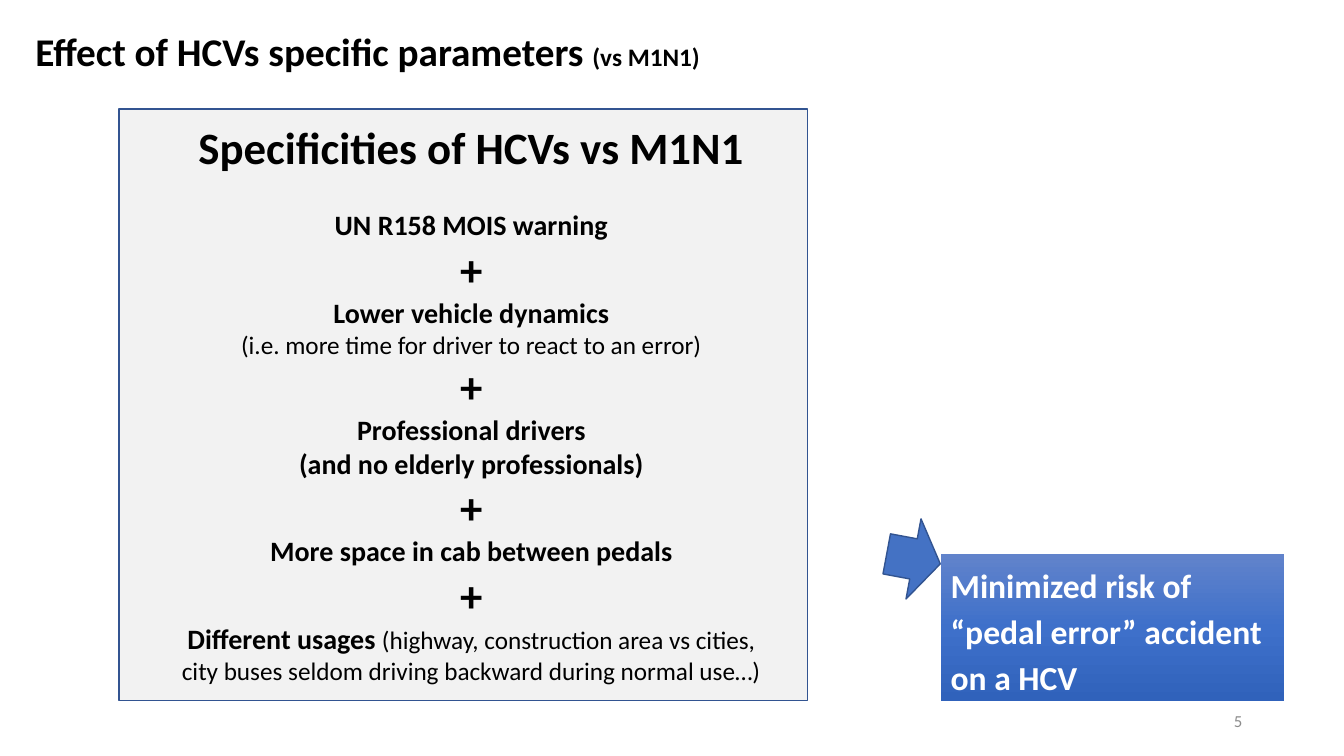
import copy

import pptx
import pptx.dml.color
import pptx.enum.shapes
import pptx.enum.text
import pptx.oxml.ns
import pptx.util

Inches = pptx.util.Inches
ALIGN = pptx.enum.text.PP_ALIGN
ANCHOR = pptx.enum.text.MSO_ANCHOR
SHAPES = pptx.enum.shapes.MSO_SHAPE
qn = pptx.oxml.ns.qn

HEADING = {"size": 32, "bold": True}
STRONG = {"size": 20, "bold": True}
DETAIL = {"size": 18, "bold": False}
PLUS = [("+", HEADING)]

SPECIFICITIES = [
    [[("UN R158 MOIS warning", STRONG)]],
    [[("Lower vehicle dynamics", STRONG)],
     [("(i.e. more time for driver to react to an error)", DETAIL)]],
    [[("Professional drivers", STRONG)],
     [("(and no elderly professionals)", STRONG)]],
    [[("More space in cab between pedals", STRONG)]],
    [[("Different usages ", STRONG),
      ("(highway, construction area vs cities, city buses seldom "
       "driving backward during normal use…)", DETAIL)]],
]


def color(value):
    return pptx.dml.color.RGBColor.from_string(value)


def apply(target, values):
    for name, value in values.items():
        setattr(target, name, value)


def place(shape, box):
    apply(shape, dict(zip(("left", "top", "width", "height"), map(Inches, box))))


def prepare_frame(frame, anchor=ANCHOR.TOP):
    apply(frame, {
        "word_wrap": True,
        "auto_size": pptx.enum.text.MSO_AUTO_SIZE.NONE,
        "vertical_anchor": anchor,
    })


def write(paragraph, runs, align=ALIGN.LEFT, text_color="000000"):
    paragraph.alignment = align
    paragraph.space_before = pptx.util.Pt(0)
    for text, style in runs:
        run = paragraph.add_run()
        run.text = text
        apply(run.font, {
            "name": "Calibri",
            "size": pptx.util.Pt(style["size"]),
            "bold": style["bold"],
        })
        run.font.color.rgb = color(text_color)


def add_block(slide, preset, box, fill=None, line=None):
    shape = slide.shapes.add_shape(preset, *map(Inches, box))
    shape.shadow.inherit = False
    if fill:
        shape.fill.solid()
        shape.fill.fore_color.rgb = color(fill)
    if line:
        shape.line.color.rgb = color(line)
        shape.line.width = pptx.util.Pt(1)
    else:
        shape.line.fill.background()
    return shape


def add_title(slide, box):
    title = slide.shapes.title
    place(title, box)
    prepare_frame(title.text_frame)
    write(title.text_frame.paragraphs[0], [
        ("Effect of HCVs specific parameters ", {"size": 28, "bold": True}),
        ("(vs M1N1)", {"size": 18, "bold": True}),
    ])


def add_specificities(slide, box):
    left, top, width, height = box
    panel = add_block(slide, SHAPES.RECTANGLE, box, "F2F2F2", "325491")
    body = slide.placeholders[1]
    panel._element.addnext(body._element)
    place(body, (left + 0.39, top + 0.06, width - 0.62, height - 0.11))
    frame = body.text_frame
    prepare_frame(frame)
    lines = [[("Specificities of HCVs vs M1N1", HEADING)]]
    for index, group in enumerate(SPECIFICITIES):
        lines += ([PLUS] if index else []) + group
    for index, runs in enumerate(lines):
        paragraph = frame.add_paragraph() if index else frame.paragraphs[0]
        properties = paragraph._p.get_or_add_pPr()
        properties.set("marL", "0")
        properties.set("indent", "0")
        properties.append(properties.makeelement(qn("a:buNone"), {}))
        write(paragraph, runs, ALIGN.CENTER)
    frame.paragraphs[1].space_before = pptx.util.Pt(24.4)


def add_conclusion(slide, box):
    left, top, width, height = box
    shape = add_block(slide, SHAPES.RECTANGLE, box)
    shape.fill.gradient()
    shape.fill.gradient_angle = 270
    stop_list = shape._element.spPr.find(".//" + qn("a:gsLst"))
    stop_list.insert(1, copy.deepcopy(stop_list[0]))
    stops = zip(shape.fill.gradient_stops, (0, 0.5, 1), ("6183CB", "3E70CA", "3062BB"))
    for stop, position, value in stops:
        stop.position = position
        stop.color.rgb = color(value)
    prepare_frame(shape.text_frame)
    paragraph = shape.text_frame.paragraphs[0]
    paragraph.line_spacing = 1.14
    write(paragraph, [("Minimized risk of “pedal error” accident on a HCV",
                       {"size": 24, "bold": True})], text_color="FFFFFF")
    arrow_box = (left - 0.54, top - 0.36, 0.54, 0.81)
    arrow = add_block(slide, SHAPES.RIGHT_ARROW, arrow_box, "4472C4", "325491")
    arrow.rotation = 10.6


def add_page_number(slide, box):
    number = slide.shapes.add_textbox(*map(Inches, box))
    prepare_frame(number.text_frame, ANCHOR.MIDDLE)
    write(number.text_frame.paragraphs[0], [("5", {"size": 12, "bold": False})],
          ALIGN.RIGHT, "8C8C8C")


def main():
    presentation = pptx.Presentation()
    presentation.slide_width = Inches(13.33)
    presentation.slide_height = Inches(7.5)
    slide = presentation.slides.add_slide(presentation.slide_layouts[1])
    add_title(slide, (0.25, 0.22, 6.83, 0.57))
    add_specificities(slide, (1.18, 1.08, 6.83, 5.87))
    add_conclusion(slide, (9.33, 5.5, 3.41, 1.46))
    add_page_number(slide, (9.42, 6.95, 3, 0.4))
    presentation.save("out.pptx")


if __name__ == "__main__":
    main()
